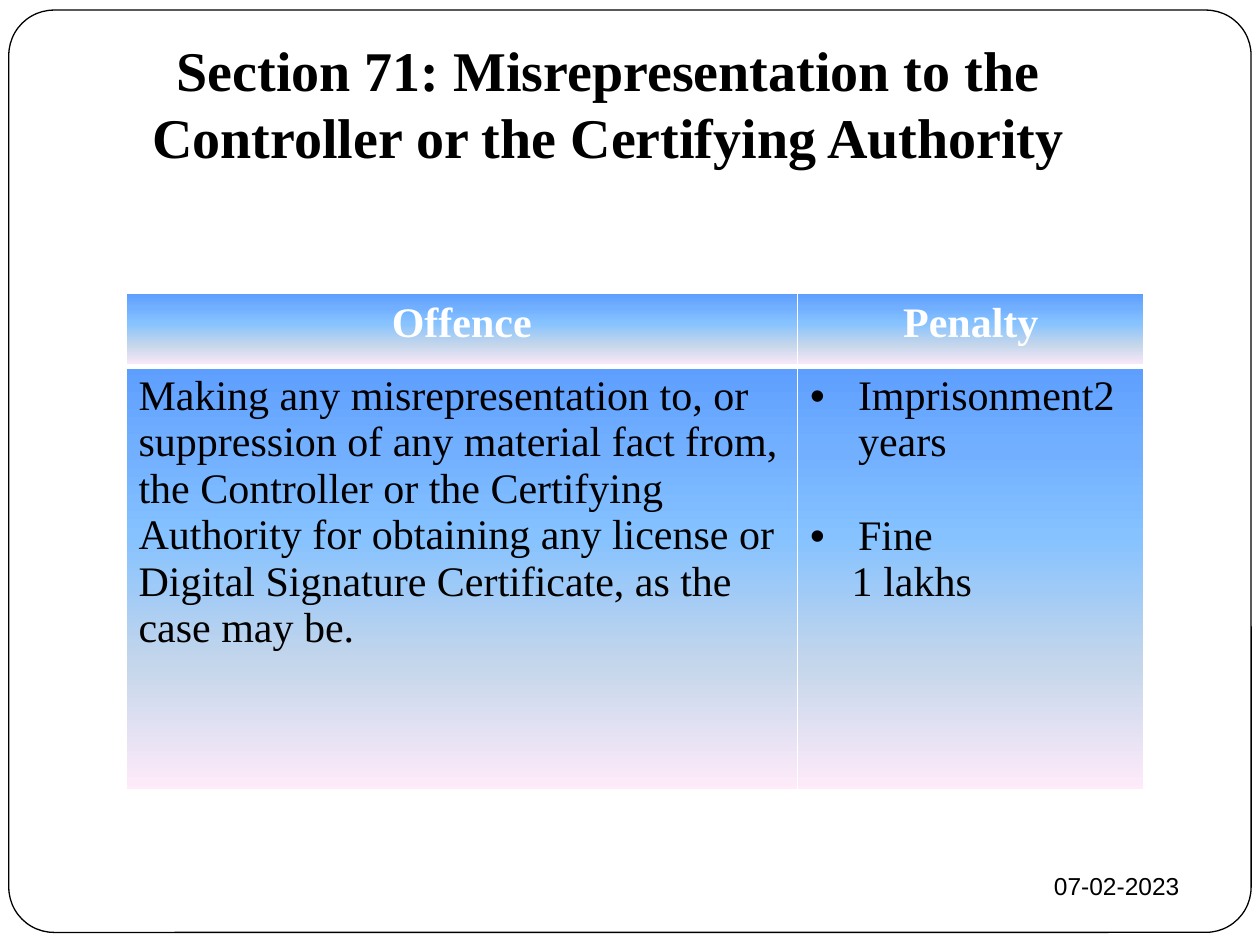
from lxml.etree import SubElement
from pptx import Presentation
from pptx.dml.color import RGBColor
from pptx.enum.shapes import MSO_SHAPE as Shape
from pptx.enum.text import MSO_ANCHOR as Anchor, MSO_AUTO_SIZE as AutoSize, PP_ALIGN as Align
from pptx.oxml.ns import qn
from pptx.util import Inches, Pt

BLACK = RGBColor(0, 0, 0)
WHITE = RGBColor(255, 255, 255)
GRADIENT = [
    (0, RGBColor(0x5E, 0x9E, 0xFF)),
    (20, RGBColor(0x72, 0xB0, 0xFF)),
    (40, RGBColor(0x85, 0xC2, 0xFF)),
    (70, RGBColor(0xC4, 0xD6, 0xEB)),
    (100, RGBColor(0xFF, 0xEB, 0xFA)),
]
SERIF = "Times New Roman"
TITLE = {"name": SERIF, "size": Pt(32), "bold": True}
HEADER = {"name": SERIF, "size": Pt(24), "bold": True}
BODY = {"name": SERIF, "size": Pt(24), "bold": False}
DATE = {"name": "Arial", "size": Pt(14)}


def apply(target, values):
    for name, value in values.items():
        setattr(target, name, value)


class SlideBuilder:
    def __init__(self, page):
        self.page = page

    def add_text(self, para, text, font, color=BLACK, **layout):
        span = para.add_run()
        span.text = text
        apply(span.font, font)
        span.font.color.rgb = color
        apply(para, layout)

    def frame(self, *bounds):
        box = self.page.shapes.add_shape(Shape.ROUNDED_RECTANGLE, *map(Inches, bounds))
        box.adjustments[0] = 0.049
        box.shadow.inherit = False
        box.fill.solid()
        box.fill.fore_color.rgb = WHITE
        box.line.color.rgb = BLACK
        box.line.width = Pt(0.75)
        self.page.shapes._spTree.insert(2, box._element)

    def title(self, text, *bounds):
        box = self.page.shapes.title
        apply(box, dict(zip(("left", "top", "width", "height"), map(Inches, bounds))))
        apply(box.text_frame, {
            "word_wrap": True, "auto_size": AutoSize.NONE,
            "vertical_anchor": Anchor.BOTTOM, "margin_bottom": Inches(0.63)})
        self.add_text(box.text_frame.paragraphs[0], text, TITLE, alignment=Align.CENTER)

    def date(self, text, *bounds):
        box = self.page.shapes.add_textbox(*map(Inches, bounds))
        apply(box.text_frame, {"word_wrap": True, "vertical_anchor": Anchor.MIDDLE})
        self.add_text(box.text_frame.paragraphs[0], text, DATE, alignment=Align.RIGHT)

    def table(self, left, top, widths, heights):
        table = self.page.shapes.add_table(
            len(heights), len(widths), Inches(left), Inches(top),
            Inches(sum(widths)), Inches(sum(heights))).table
        for column, width in zip(table.columns, widths):
            column.width = Inches(width)
        for row, height in zip(table.rows, heights):
            row.height = Inches(height)
        for cell in table.iter_cells():
            self.style_cell(cell)
        self.border(table, 0, "lnB")
        self.border(table, 1, "lnT")
        return table

    def style_cell(self, cell):
        props = cell._tc.get_or_add_tcPr()
        for side in ("lnL", "lnR", "lnT", "lnB"):
            line = SubElement(props, qn(f"a:{side}"), w=str(Pt(1)))
            fill = SubElement(line, qn("a:solidFill"))
            SubElement(fill, qn("a:srgbClr"), val=str(WHITE))
        gradient = SubElement(props, qn("a:gradFill"), rotWithShape="1")
        stops = SubElement(gradient, qn("a:gsLst"))
        for percent, color in GRADIENT:
            stop = SubElement(stops, qn("a:gs"), pos=str(percent * 1000))
            SubElement(stop, qn("a:srgbClr"), val=str(color))
        SubElement(gradient, qn("a:lin"), ang="5400000", scaled="0")

    def border(self, table, row, side):
        for cell in table.rows[row].cells:
            cell._tc.tcPr.find(qn(f"a:{side}")).set("w", str(Pt(3)))

    def indent(self, para, left, bullet=False):
        props = para._p.get_or_add_pPr()
        props.set("marL", str(Inches(left)))
        props.set("indent", str(Inches(-left if bullet else 0)))
        if bullet:
            color = SubElement(props, qn("a:buClr"))
            SubElement(color, qn("a:srgbClr"), val=str(BLACK))
            SubElement(props, qn("a:buFont"), typeface="Arial")
            SubElement(props, qn("a:buChar"), char="•")


def main():
    deck = Presentation()
    deck.slide_width, deck.slide_height = Inches(10), Inches(7.5)
    builder = SlideBuilder(deck.slides.add_slide(deck.slide_layouts[5]))

    builder.frame(0.07, 0.08, 9.86, 7.32)
    builder.title("Section 71: Misrepresentation to the Controller or the Certifying Authority",
                  0.33, 0.6, 9, 1.38)
    builder.date("07-02-2023", 6.75, 6.77, 2.71, 0.52)

    table = builder.table(1, 2.33, [5.33, 2.75], [0.58, 3.36])
    for cell, heading in zip(table.rows[0].cells, ("Offence", "Penalty")):
        builder.add_text(cell.text_frame.paragraphs[0], heading, HEADER, WHITE,
                         alignment=Align.CENTER)

    offence, penalty = table.rows[1].cells
    builder.add_text(
        offence.text_frame.paragraphs[0],
        "Making any misrepresentation to, or suppression of any material fact from, "
        "the Controller or the Certifying Authority for obtaining any license or "
        "Digital Signature Certificate, as the case may be.", BODY)

    frame = penalty.text_frame
    items = [("Imprisonment2 years", 0.38, True, 0),
             ("Fine", 0.38, True, 27),
             ("1 lakhs", 0.33, False, 0)]
    for index, (text, left, bullet, gap) in enumerate(items):
        para = frame.add_paragraph() if index else frame.paragraphs[0]
        builder.add_text(para, text, BODY, space_before=Pt(gap))
        builder.indent(para, left, bullet)

    deck.save("out.pptx")


if __name__ == "__main__":
    main()
